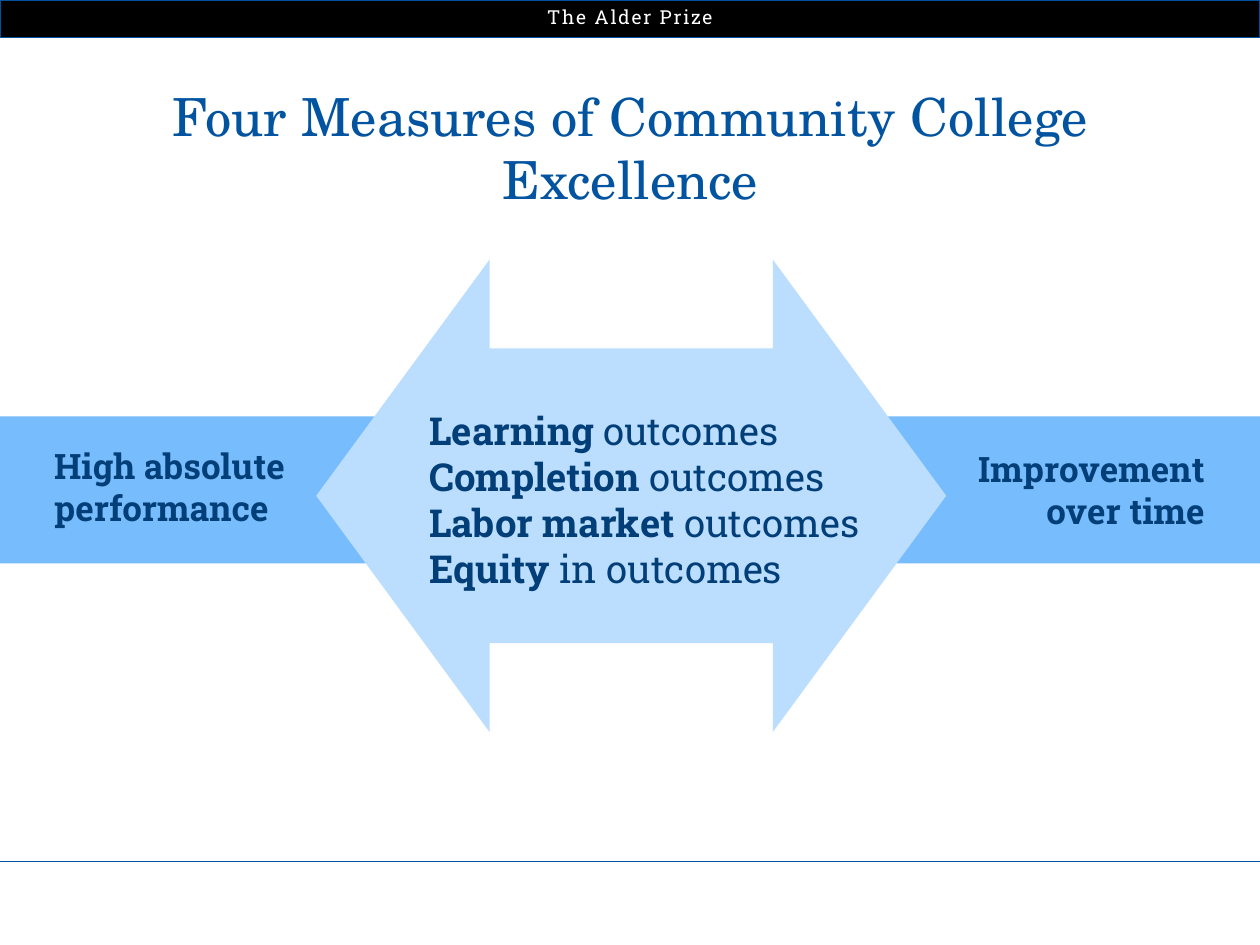
from dataclasses import dataclass

from lxml import etree
from pptx import Presentation
from pptx.dml.color import RGBColor
from pptx.enum.shapes import MSO_CONNECTOR, MSO_SHAPE
from pptx.enum.text import PP_ALIGN
from pptx.oxml.ns import qn
from pptx.util import Pt

LEFT, CENTER, RIGHT = PP_ALIGN.LEFT, PP_ALIGN.CENTER, PP_ALIGN.RIGHT
RECTANGLE, DOUBLE_ARROW = MSO_SHAPE.RECTANGLE, MSO_SHAPE.LEFT_RIGHT_ARROW
SLAB, SCHOLA = "Roboto Slab", "TeX Gyre Schola"
WIDTH, HEIGHT = 720, 540
COLORS = {
    "black": "000000",
    "white": "FFFFFF",
    "border": "00529F",
    "title": "0354A0",
    "text": "023F78",
    "band": "77BCFC",
    "arrow": "BBDDFE",
}


@dataclass
class Box:
    left: float
    top: float
    width: float
    height: float


@dataclass
class Run:
    text: str
    bold: bool = False


@dataclass
class Label:
    box: Box
    lines: list[list[Run]]
    size: float
    color: str = "text"
    font: str = SLAB
    align: PP_ALIGN = LEFT
    spacing: float = 0


MEASURES = [
    ("Learning ", "outcomes"),
    ("Completion ", "outcomes"),
    ("Labor market ", "outcomes"),
    ("Equity ", "in outcomes"),
]
LABELS = [
    Label(Box(0, -0.7, WIDTH, 21), [[Run("The Alder Prize")]], 11, "white",
          align=CENTER, spacing=1),
    Label(Box(238.3, 229, 285, 114),
          [[Run(name, True), Run(rest)] for name, rest in MEASURES], 22),
    Label(Box(23.8, 250.5, 157.7, 55.5), [[Run("High absolute performance", True)]], 20),
    Label(Box(545, 252, 150.5, 55.5), [[Run("Improvement over time", True)]], 20, align=RIGHT),
    Label(Box(15.8, 44.6, 689, 44), [[Run("Four Measures of Community College Excellence")]],
          30, "title", SCHOLA, CENTER),
]


def rgb(name: str) -> RGBColor:
    return RGBColor.from_string(COLORS[name])


def add_filled_shape(slide, kind, box: Box, fill: str):
    """Add a flat shape without outline or shadow."""
    shape = slide.shapes.add_shape(
        kind, Pt(box.left), Pt(box.top), Pt(box.width), Pt(box.height))
    shape.shadow.inherit = False
    shape.fill.solid()
    shape.fill.fore_color.rgb = rgb(fill)
    shape.line.fill.background()
    return shape


def add_rule(slide, top: float) -> None:
    """Add a thin line across the whole slide."""
    rule = slide.shapes.add_connector(
        MSO_CONNECTOR.STRAIGHT, Pt(0), Pt(top), Pt(WIDTH), Pt(top))
    rule.line.color.rgb = rgb("border")
    rule.line.width = Pt(0.5)
    etree.SubElement(rule._element.spPr, qn("a:effectLst"))


def add_label(slide, label: Label) -> None:
    box = label.box
    shape = slide.shapes.add_textbox(
        Pt(box.left), Pt(box.top), Pt(box.width), Pt(box.height))
    frame = shape.text_frame
    frame.word_wrap = True
    for index, line in enumerate(label.lines):
        paragraph = frame.add_paragraph() if index else frame.paragraphs[0]
        paragraph.alignment = label.align
        paragraph.font.name = label.font
        paragraph.font.size = Pt(label.size)
        paragraph.font.color.rgb = rgb(label.color)
        for part in line:
            run = paragraph.add_run()
            run.text = part.text
            run.font.bold = part.bold
            if label.spacing:
                run._r.get_or_add_rPr().set("spc", str(round(label.spacing * 100)))


def main() -> None:
    presentation = Presentation()
    presentation.slide_width = Pt(WIDTH)
    presentation.slide_height = Pt(HEIGHT)
    slide = presentation.slides.add_slide(presentation.slide_layouts[6])

    header = add_filled_shape(slide, RECTANGLE, Box(0, 0, WIDTH, 21.6), "black")
    header.line.color.rgb = rgb("border")
    header.line.width = Pt(0.75)
    add_rule(slide, 492)

    add_filled_shape(slide, RECTANGLE, Box(0, 238, WIDTH, 84), "band")
    arrow = add_filled_shape(slide, DOUBLE_ARROW, Box(180.7, 148.3, 360, 270), "arrow")
    arrow.adjustments[0] = 0.624
    arrow.adjustments[1] = 0.367

    for label in LABELS:
        add_label(slide, label)
    presentation.save("out.pptx")


if __name__ == "__main__":
    main()
